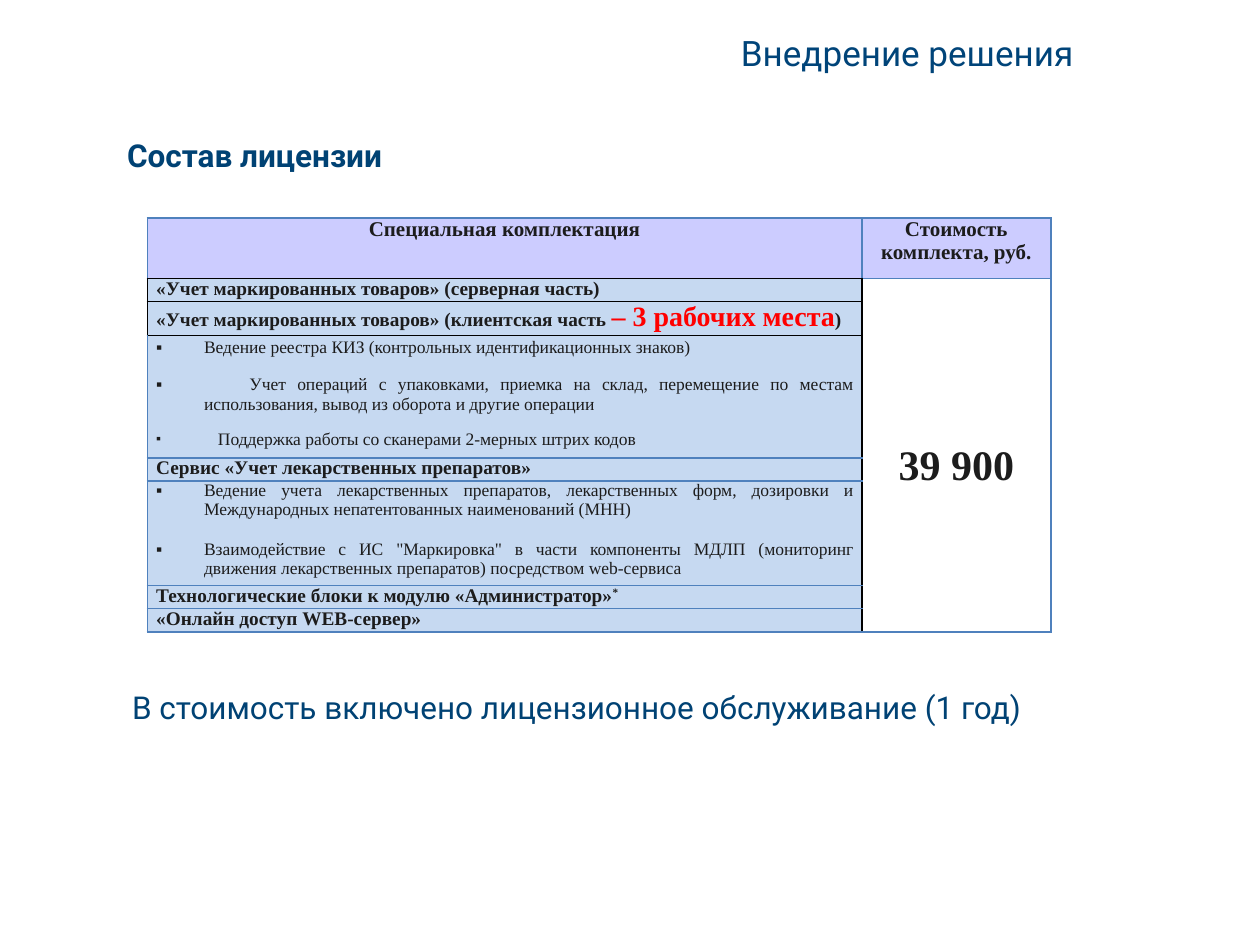
from lxml import etree
from pptx import Presentation, util as u
from pptx.dml.color import RGBColor
from pptx.enum import text as t
from pptx.oxml.ns import qn

INK, BLUE, BLACK = "1C1C1C", "4F81BD", "000000"
SERIF = "Times New Roman"
LEFT, CENTER, JUSTIFY = t.PP_ALIGN.LEFT, t.PP_ALIGN.CENTER, t.PP_ALIGN.JUSTIFY


def style(run, size, color=INK, bold=False, face=SERIF):
    run.font.size, run.font.bold, run.font.name = u.Pt(size), bold, face
    run.font.color.rgb = RGBColor.from_string(color)


def set_borders(cell, colors):
    """Draw 1 pt borders; colors are given as left, right, top, bottom."""
    props = cell._tc.get_or_add_tcPr()
    for position, (side, color) in enumerate(zip("LRTB", colors)):
        line = etree.Element(qn(f"a:ln{side}"), w="12700")
        solid = etree.SubElement(line, qn("a:solidFill"))
        etree.SubElement(solid, qn("a:srgbClr"), val=color)
        props.insert(position, line)


prs = Presentation()
prs.slide_width, prs.slide_height = u.Inches(10), u.Inches(7.5)
slide = prs.slides.add_slide(prs.slide_layouts[6])

# Headings and the note under the table
captions = [
    ("Внедрение решения", -0.25, 0, 8.87, 0.83, 20, "004479", False, t.PP_ALIGN.RIGHT, 1),
    ("Состав лицензии", 0.91, 1, 3.75, 0.41, 18, "004274", True, LEFT, 1.15),
    ("В стоимость включено лицензионное обслуживание (1 год)",
     0.95, 5.4, 9, 0.42, 18, "004274", False, LEFT, 1),
]
for words, x, y, w, h, size, color, bold, align, spacing in captions:
    frame = slide.shapes.add_textbox(*map(u.Inches, (x, y, w, h))).text_frame
    frame.word_wrap = True
    frame.vertical_anchor = t.MSO_ANCHOR.MIDDLE
    line = frame.paragraphs[0]
    line.text = words
    line.alignment, line.line_spacing = align, spacing
    style(line.runs[0], size, color, bold, "Roboto")

# License table
row_heights = [0.48, 0.18, 0.27, 0.97, 0.18, 0.83, 0.18, 0.18]
license_table = slide.shapes.add_table(
    len(row_heights), 2, u.Inches(1.17), u.Inches(1.73), u.Inches(7.17), u.Inches(3.27)).table
license_table.first_row = license_table.horz_banding = False
for column, width in zip(license_table.columns, (5.67, 1.5)):
    column.width = u.Inches(width)
for row, height in zip(license_table.rows, row_heights):
    row.height = u.Inches(height)

for r in range(len(row_heights)):
    for c in range(2):
        cell = license_table.cell(r, c)
        cell.margin_left = cell.margin_right = u.Inches(0.07)
        cell.margin_top = cell.margin_bottom = 0
        cell.fill.solid()
        fill = "CCCCFF" if r == 0 else ("C6D9F1", "FFFFFF")[c]
        cell.fill.fore_color.rgb = RGBColor.from_string(fill)
        if c == 1:
            colors = (BLUE if r == 0 else BLACK, BLUE, BLUE, BLUE)
        elif r in (1, 2):
            colors = (BLACK,) * 4
        else:
            colors = (BLUE, BLUE if r == 0 else BLACK,
                      BLACK if r == 3 else BLUE, BLACK if r == 0 else BLUE)
        set_borders(cell, colors)

price = license_table.cell(1, 1)
price.merge(license_table.cell(7, 1))
price.vertical_anchor = t.MSO_ANCHOR.MIDDLE
price.margin_top = u.Inches(0.17)

# Bold lines: row, column, alignment, runs of (text, size, color)
bold_lines = [
    (0, 0, CENTER, [("Специальная комплектация", 12, INK)]),
    (1, 0, JUSTIFY, [("«Учет маркированных товаров» (серверная часть)", 11, INK)]),
    (1, 1, CENTER, [("39\u00a0900", 24, INK)]),
    (2, 0, JUSTIFY, [("«Учет маркированных товаров» (клиентская часть ", 11, INK),
                     ("– 3 рабочих места", 16, "FF0000"), (")", 11, INK)]),
    (4, 0, LEFT, [("Сервис «Учет лекарственных препаратов»", 11, INK)]),
    (6, 0, JUSTIFY, [("Технологические блоки к модулю «Администратор»", 11, INK), ("*", 11, INK)]),
    (7, 0, JUSTIFY, [("«Онлайн доступ WEB-сервер»", 11, INK)]),
]
for r, c, align, parts in bold_lines:
    line = license_table.cell(r, c).text_frame.paragraphs[0]
    line.alignment = align
    for words, size, color in parts:
        run = line.add_run()
        run.text = words
        style(run, size, color, True)
        if words == "*":
            run.font._element.set("baseline", "30000")

price_heading = license_table.cell(0, 1).text_frame
price_heading.text = "Стоимость\nкомплекта, руб."
for line in price_heading.paragraphs:
    line.alignment = CENTER
    style(line.runs[0], 12, bold=True)

# Bullet lists: text, hanging indent, line spacing, space before, bullet size in %
features = {
    3: [("Ведение реестра КИЗ (контрольных идентификационных знаков)", 0.38, 1.15, 0, 100),
        ("\tУчет операций с упаковками, приемка на склад, перемещение по местам "
         "использования, вывод из оборота и другие операции", 0.38, 1, 10, 100),
        ("Поддержка работы со сканерами 2-мерных штрих кодов", 0.49, 1, 9, 80)],
    5: [("Ведение учета лекарственных препаратов, лекарственных форм, дозировки и "
         "Международных непатентованных наименований (МНН)", 0.38, 1, 0, 100),
        ("Взаимодействие с ИС \"Маркировка\" в части компоненты МДЛП (мониторинг "
         "движения лекарственных препаратов) посредством web-сервиса", 0.38, 1, 11.5, 100)],
}
for r, items in features.items():
    frame = license_table.cell(r, 0).text_frame
    frame.text = "\n".join(item[0] for item in items)
    for line, (words, indent, spacing, before, bullet_size) in zip(frame.paragraphs, items):
        line.alignment, line.line_spacing = JUSTIFY, spacing
        if before:
            line.space_before = u.Pt(before)
        props = line._p.get_or_add_pPr()
        props.set("marL", str(u.Inches(indent)))
        props.set("indent", str(-u.Inches(indent)))
        etree.SubElement(props, qn("a:buSzPct"), val=str(bullet_size * 1000))
        etree.SubElement(props, qn("a:buFont"), typeface=SERIF)
        etree.SubElement(props, qn("a:buChar"), char="▪")
        if words.startswith("\t"):
            stops = etree.SubElement(props, qn("a:tabLst"))
            etree.SubElement(stops, qn("a:tab"), pos=str(u.Inches(0.74)), algn="l")
        style(line.runs[0], 10)

prs.save("out.pptx")
